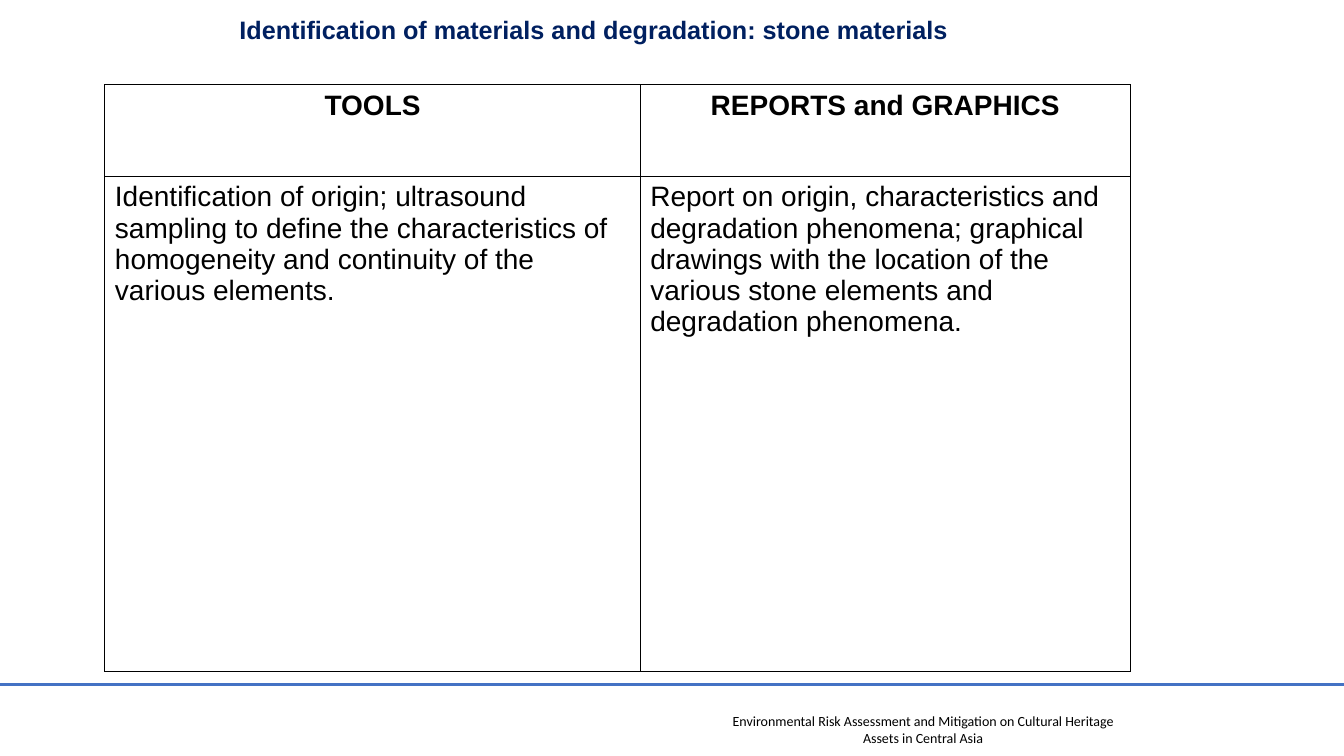
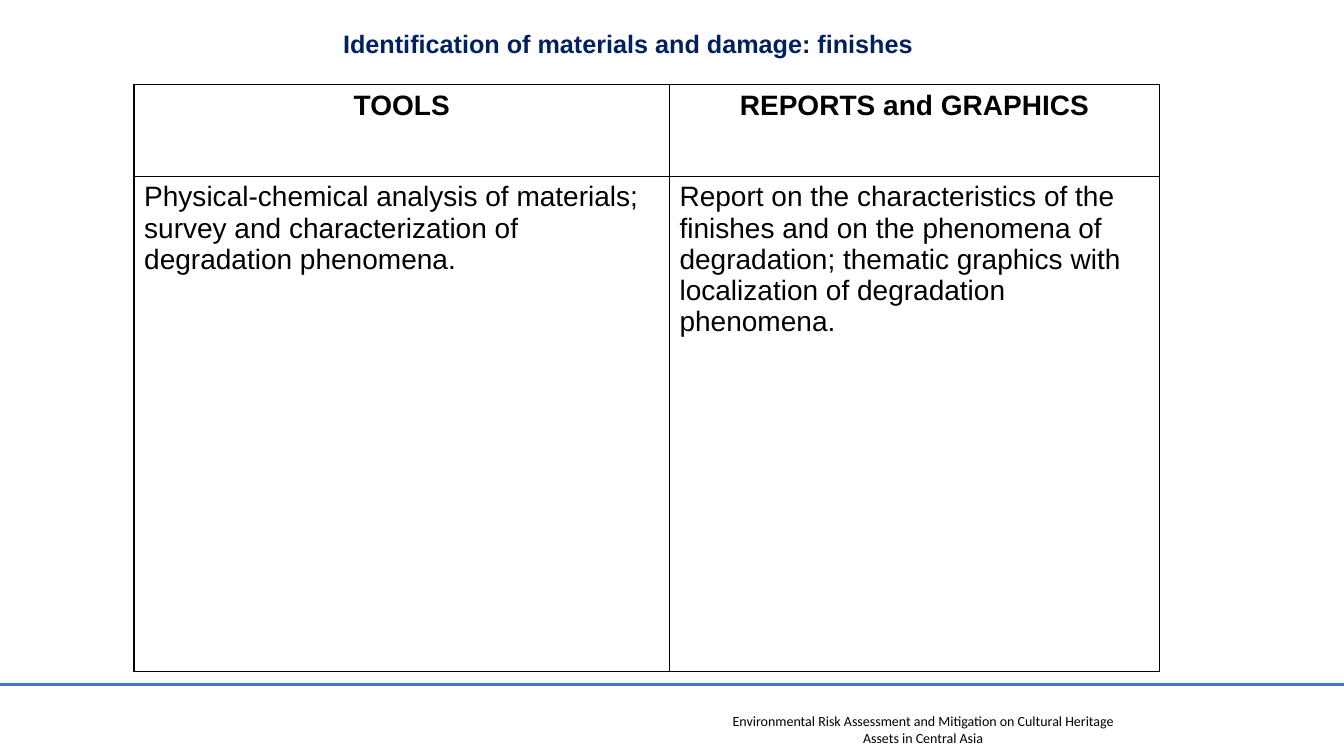
from lxml import etree
from pptx import Presentation
from pptx.dml.color import RGBColor
from pptx.enum.shapes import MSO_CONNECTOR
from pptx.enum.text import MSO_ANCHOR, MSO_AUTO_SIZE, PP_ALIGN
from pptx.oxml.ns import qn
from pptx.util import Inches, Pt

STRAIGHT = MSO_CONNECTOR.STRAIGHT
TOP, MIDDLE = MSO_ANCHOR.TOP, MSO_ANCHOR.MIDDLE
FIXED = MSO_AUTO_SIZE.NONE
LEFT, CENTER = PP_ALIGN.LEFT, PP_ALIGN.CENTER

WIDTH, HEIGHT = 13.33, 7.5
HEADS = ["TOOLS", "REPORTS and GRAPHICS"]
FOOTER = ("Environmental Risk Assessment and Mitigation on Cultural Heritage "
          "Assets in Central Asia")


def color(value):
    return RGBColor.from_string(value)


def write(frame, text, size=20, font="Arial", ink="000000", bold=False,
          align=LEFT, anchor=TOP):
    frame.word_wrap = True
    frame.vertical_anchor = anchor
    frame.text = text
    line = frame.paragraphs[0]
    line.alignment = align
    line.font.size = Pt(size)
    line.font.name = font
    line.font.bold = bold
    line.font.color.rgb = color(ink)


class Deck:
    navy, blue, black, white = "002060", "4472C4", "000000", "FFFFFF"
    cols, rows = (5.31, 4.86), (0.91, 4.91)

    def __init__(self):
        self.file = Presentation()
        self.file.slide_width = Inches(WIDTH)
        self.file.slide_height = Inches(HEIGHT)
        self.slide = None

    def start(self):
        self.slide = self.file.slides.add_slide(self.file.slide_layouts[5])
        self.rule()
        self.footer()

    def title(self, text, left, top, anchor):
        box = self.slide.shapes.title
        box.left, box.top = Inches(left), Inches(top)
        box.width, box.height = Inches(7.78), Inches(0.65)
        box.text_frame.auto_size = FIXED
        write(box.text_frame, text, size=18, ink=self.navy, bold=True,
              align=CENTER, anchor=anchor)

    def rule(self):
        y = Inches(6.79)
        line = self.slide.shapes.add_connector(STRAIGHT, 0, y, Inches(WIDTH), y)
        line.line.color.rgb = color(self.blue)
        line.line.width = Pt(2.25)
        etree.SubElement(line._element.spPr, qn("a:effectLst"))

    def footer(self):
        box = self.slide.shapes.add_textbox(
            Inches(7.02), Inches(7.02), Inches(4.27), Inches(0.44))
        write(box.text_frame, FOOTER, size=10, font="Calibri", align=CENTER)

    def border(self, cell):
        props = cell._tc.get_or_add_tcPr()
        for side in ("lnL", "lnR", "lnT", "lnB"):
            line = etree.SubElement(props, qn(f"a:{side}"), w=str(Pt(1)))
            fill = etree.SubElement(line, qn("a:solidFill"))
            etree.SubElement(fill, qn("a:srgbClr"), val=self.black)

    def table(self, left, body):
        grid = self.slide.shapes.add_table(
            len(self.rows), len(self.cols), Inches(left), Inches(0.84),
            Inches(sum(self.cols)), Inches(sum(self.rows))).table
        grid.first_row = grid.horz_banding = False
        for col, width in zip(grid.columns, self.cols):
            col.width = Inches(width)
        for row, height, texts in zip(grid.rows, self.rows, (HEADS, body)):
            row.height = Inches(height)
            head = texts is HEADS
            for cell, text in zip(row.cells, texts):
                self.border(cell)
                cell.fill.solid()
                cell.fill.fore_color.rgb = color(self.white)
                write(cell.text_frame, text, bold=head,
                      align=CENTER if head else LEFT)


def main():
    deck = Deck()

    deck.start()
    deck.title("Identification of materials and degradation: stone materials",
               2, 0.09, TOP)
    deck.table(1.04, [
        "Identification of origin; ultrasound sampling to define the "
        "characteristics of homogeneity and continuity of the various elements.",
        "Report on origin, characteristics and degradation phenomena; graphical "
        "drawings with the location of the various stone elements and "
        "degradation phenomena."])

    deck.start()
    deck.title("Identification of materials and damage: finishes",
               2.34, 0.11, MIDDLE)
    deck.table(1.33, [
        "Physical-chemical analysis of materials; survey and characterization "
        "of degradation phenomena.",
        "Report on the characteristics of the finishes and on the phenomena of "
        "degradation; thematic graphics with localization of degradation "
        "phenomena."])

    deck.file.save("out.pptx")


if __name__ == "__main__":
    main()
